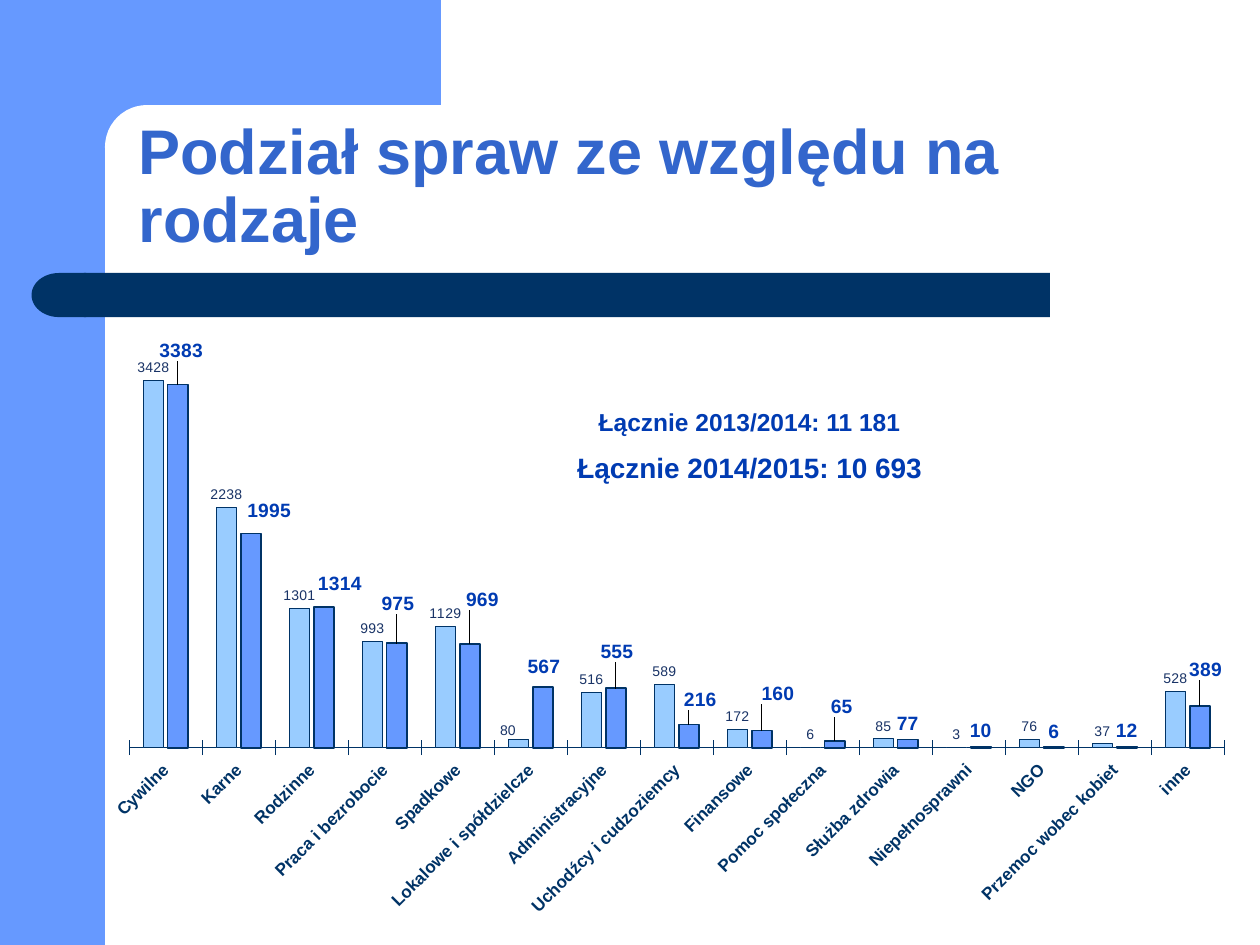
from typing import NamedTuple

from lxml import etree
from pptx import Presentation
from pptx import util as u
from pptx.chart.data import CategoryChartData
from pptx.dml.color import RGBColor
from pptx.enum import chart as ch, shapes, text
from pptx.oxml import ns

WIDTH, HEIGHT = u.Inches(10), u.Inches(7.5)
FONT = "Arial"
NAVY, BLUE, SKY, WHITE = "003366", "6699FF", "99CCFF", "FFFFFF"
TITLE_BLUE, VALUE_BLUE, VALUE_NAVY = "3366CC", "003BB2", "193366"


class Box(NamedTuple):
    """Left, top, width and height in 12 columns by 9 rows."""
    col: float
    row: float
    cols: float
    rows: float

    def place(self) -> tuple[int, ...]:
        return (int(WIDTH * self.col / 12), int(HEIGHT * self.row / 9),
                int(WIDTH * self.cols / 12), int(HEIGHT * self.rows / 9))


class Panel(NamedTuple):
    kind: int
    box: Box
    color: str
    rotation: int = 0


class Year(NamedTuple):
    name: str
    values: tuple[int, ...]
    fill: str
    line: float
    label_size: float
    label_color: str
    label_bold: bool
    shifts: dict[int, tuple[float, float]]  # label moves, % of the chart


PANELS = [
    Panel(shapes.MSO_SHAPE.RECTANGLE, Box(0, 0, 1, 9), BLUE),
    Panel(shapes.MSO_SHAPE.RECTANGLE, Box(0.9, 0, 3.3, 1.4), BLUE),
    Panel(shapes.MSO_SHAPE.ROUNDED_RECTANGLE, Box(1, 1, 6.7, 0.8), WHITE),
    Panel(shapes.MSO_SHAPE.RECTANGLE, Box(0.8, 2.6, 9.2, 0.42), NAVY),
    Panel(shapes.MSO_SHAPE.FLOWCHART_DELAY, Box(0.3, 2.6, 0.52, 0.42), NAVY, 180),
]
TITLE_BOX = Box(1.2, 1, 10.5, 1.5)
CHART_BOX = Box(1.01, 2.62, 10.99, 6.65)
TOTALS_BOX = Box(4.87, 3.82, 4.54, 1.42)

CASE_TYPES = [
    "Cywilne", "Karne", "Rodzinne", "Praca i bezrobocie", "Spadkowe",
    "Lokalowe i spółdzielcze", "Administracyjne", "Uchodźcy i cudzoziemcy",
    "Finansowe", "Pomoc społeczna", "Służba zdrowia", "Niepełnosprawni",
    "NGO", "Przemoc wobec kobiet", "inne",
]
YEARS = [
    Year("Series 1",
         (3428, 2238, 1301, 993, 1129, 80, 516, 589, 172, 6, 85, 3, 76, 37, 528),
         SKY, 0.25, 8, VALUE_NAVY, False, {5: (-0.9, 0.5)}),
    Year("Series 2",
         (3383, 1995, 1314, 975, 969, 567, 555, 216, 160, 65, 77, 10, 6, 12, 389),
         BLUE, 1, 11, VALUE_BLUE, True,
         {0: (0.3, -2.6), 1: (1.6, -1), 2: (1.4, -1), 3: (0.1, -3.4),
          4: (1.1, -4), 5: (0.1, -0.7), 6: (0.1, -3), 7: (1, -1.3),
          8: (1.4, -3), 9: (0.6, -2.6), 14: (0.5, -3)}),
]
TOTALS = [("Łącznie 2013/2014: 11 181", 14), ("Łącznie 2014/2015: 10 693", 16)]


def rgb(color: str) -> RGBColor:
    return RGBColor.from_string(color)


def style(font, size: float, color: str, bold: bool = False) -> None:
    font.name, font.size, font.bold = FONT, u.Pt(size), bold
    font.color.rgb = rgb(color)


def outline(line, width: float) -> None:
    line.color.rgb = rgb(NAVY)
    line.width = u.Pt(width)


def manual_layout(**settings) -> etree.Element:
    layout = etree.Element(ns.qn("c:layout"))
    manual = etree.SubElement(layout, ns.qn("c:manualLayout"))
    for tag, value in settings.items():
        etree.SubElement(manual, ns.qn(f"c:{tag}")).set("val", str(value))
    return layout


def add_panel(slide, panel: Panel) -> None:
    shape = slide.shapes.add_shape(panel.kind, *panel.box.place())
    if panel.kind == shapes.MSO_SHAPE.ROUNDED_RECTANGLE:
        shape.adjustments[0] = 0.5
    shape.rotation = panel.rotation
    shape.shadow.inherit = False
    shape.fill.solid()
    shape.fill.fore_color.rgb = rgb(panel.color)
    shape.line.fill.background()


def set_title(slide, wording: str) -> None:
    title = slide.shapes.title
    title.left, title.top, title.width, title.height = TITLE_BOX.place()
    frame = title.text_frame
    frame.text = wording
    frame.word_wrap = True
    frame.auto_size = text.MSO_AUTO_SIZE.NONE
    frame.vertical_anchor = text.MSO_ANCHOR.BOTTOM
    heading = frame.paragraphs[0]
    heading.alignment = text.PP_ALIGN.LEFT
    heading.line_spacing = 0.9
    style(heading.font, 36, TITLE_BLUE, True)


def format_year(series, year: Year) -> None:
    series.format.fill.solid()
    series.format.fill.fore_color.rgb = rgb(year.fill)
    outline(series.format.line, year.line)
    series.invert_if_negative = False

    labels = series.data_labels
    labels.show_value = True
    moved = [series.points[index].data_label for index in year.shifts]
    for label in [labels, *moved]:
        style(label.font, year.label_size, year.label_color, year.label_bold)
        label.position = ch.XL_LABEL_POSITION.OUTSIDE_END

    # Labels moved away from their bars
    for node in series._element.iter(ns.qn("c:dLbl")):
        index = node.find(ns.qn("c:idx"))
        dx, dy = year.shifts[int(index.get("val"))]
        index.addnext(manual_layout(x=dx / 100, y=dy / 100))


def add_case_chart(slide) -> None:
    data = CategoryChartData()
    data.categories = CASE_TYPES
    for year in YEARS:
        data.add_series(year.name, year.values)
    chart = slide.shapes.add_chart(
        ch.XL_CHART_TYPE.COLUMN_CLUSTERED, *CHART_BOX.place(), data).chart
    chart.has_legend = chart.has_title = False
    style(chart.font, 9.5, NAVY)

    # Plot area
    area = chart._chartSpace.chart.plotArea
    for old in area.findall(ns.qn("c:layout")):
        area.remove(old)
    area.insert(0, manual_layout(layoutTarget="inner", xMode="edge", yMode="edge",
                                 x=0.02, y=0.062, w=0.949, h=0.615))
    plot = chart.plots[0]
    plot.gap_width, plot.overlap = 140, -20
    plot.vary_by_categories = False
    for series, year in zip(plot.series, YEARS):
        format_year(series, year)

    # Axes
    counts = chart.value_axis
    counts.minimum_scale, counts.maximum_scale = 0, 4000
    counts.has_major_gridlines = counts.visible = False
    types = chart.category_axis
    types.tick_label_position = ch.XL_TICK_LABEL_POSITION.LOW
    types.major_tick_mark = ch.XL_TICK_MARK.CROSS
    outline(types.format.line, 0.25)
    style(types.tick_labels.font, 9.8, NAVY, True)
    slant = types._element.find(".//" + ns.qn("a:bodyPr"))
    slant.set("rot", str(-45 * 60000))
    slant.set("vert", "horz")


def add_totals(slide) -> None:
    frame = slide.shapes.add_textbox(*TOTALS_BOX.place()).text_frame
    frame.word_wrap = True
    for number, (wording, size) in enumerate(TOTALS):
        total = frame.add_paragraph() if number else frame.paragraphs[0]
        total.text = wording
        total.alignment = text.PP_ALIGN.CENTER
        total.space_before = u.Pt(size / 2)
        style(total.font, size, VALUE_BLUE, True)


def main() -> None:
    deck = Presentation()
    deck.slide_width, deck.slide_height = WIDTH, HEIGHT
    slide = deck.slides.add_slide(deck.slide_layouts.get_by_name("Title Only"))
    for panel in PANELS:
        add_panel(slide, panel)
    # Bring the title in front of the panels
    slide.shapes._spTree.append(slide.shapes.title._element)
    set_title(slide, "Podział spraw ze względu na rodzaje")
    add_case_chart(slide)
    add_totals(slide)
    deck.save("out.pptx")


if __name__ == "__main__":
    main()
